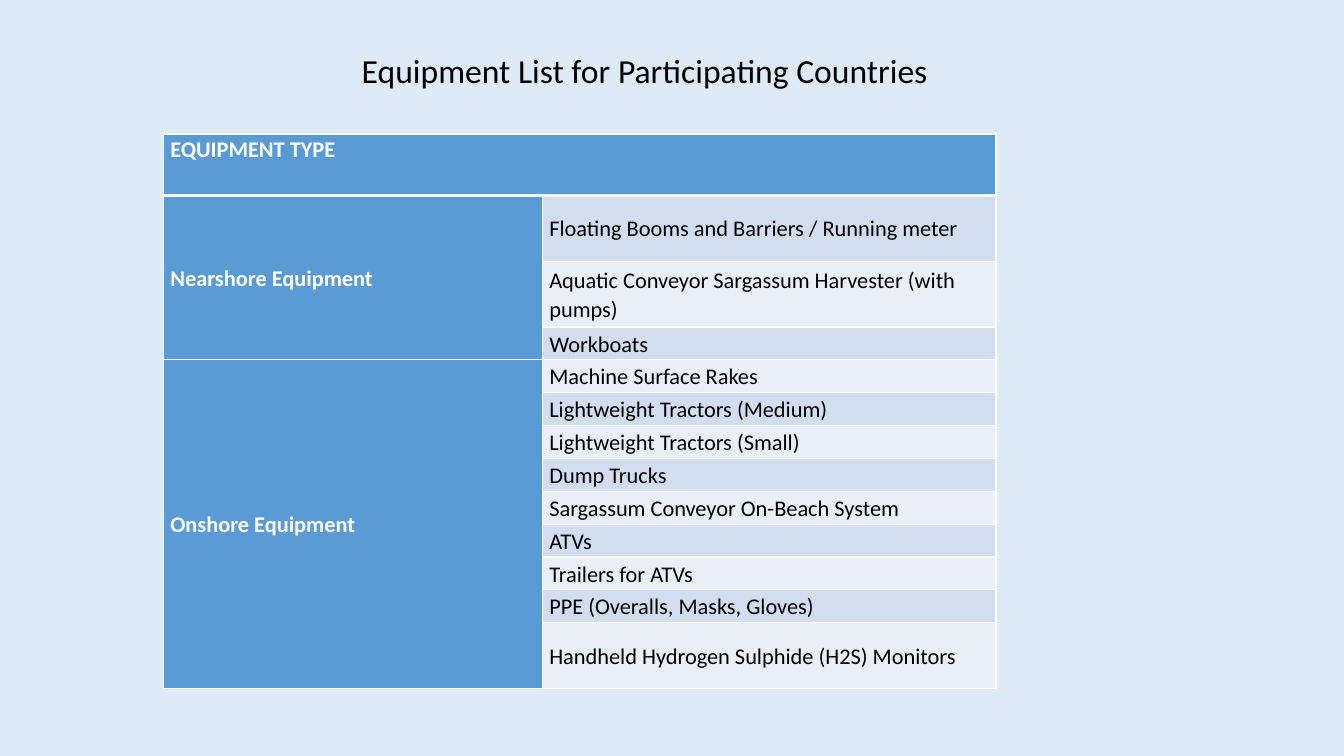
"""Build the equipment list slide."""
import pptx
import pptx.dml.color
import pptx.enum.text
import pptx.oxml
import pptx.oxml.ns
import pptx.util

RGBColor = pptx.dml.color.RGBColor
BACKGROUND = RGBColor(0xDE, 0xEB, 0xF7)
BLUE = RGBColor(0x5B, 0x9B, 0xD5)
DARK_BAND = RGBColor(0xD2, 0xDE, 0xEF)
LIGHT_BAND = RGBColor(0xEA, 0xEF, 0xF7)
WHITE = RGBColor(0xFF, 0xFF, 0xFF)
BLACK = RGBColor(0x00, 0x00, 0x00)

HEADING = "EQUIPMENT TYPE"
EQUIPMENT = {
    "Nearshore Equipment": [
        ("Floating Booms and Barriers / Running meter", 2),
        ("Aquatic Conveyor Sargassum Harvester (with pumps)", 2),
        ("Workboats", 1),
    ],
    "Onshore Equipment": [
        ("Machine Surface Rakes", 1),
        ("Lightweight Tractors (Medium)", 1),
        ("Lightweight Tractors (Small)", 1),
        ("Dump Trucks", 1),
        ("Sargassum Conveyor On-Beach System", 1),
        ("ATVs", 1),
        ("Trailers for ATVs", 1),
        ("PPE (Overalls, Masks, Gloves)", 1),
        ("Handheld Hydrogen Sulphide (H2S) Monitors", 2),
    ],
}
COLUMN_WIDTHS = (28.2, 33.75)
HEADER_HEIGHT = 8.13
LINE_HEIGHT = 4.35


class EquipmentPage:
    """Draw on one page, with lengths in percent of the slide's size."""

    font_name = "Calibri"
    title_size = 24
    cell_size = 16

    def __init__(self, deck):
        self.deck = deck
        self.page = deck.slides.add_slide(deck.slide_layouts[6])
        fill = self.page.background.fill
        fill.solid()
        fill.fore_color.rgb = BACKGROUND

    def across(self, share):
        return round(self.deck.slide_width * share / 100)

    def down(self, share):
        return round(self.deck.slide_height * share / 100)

    def add_text(self, para, text, size, color, bold=False):
        span = para.add_run()
        span.text = text
        span.font.name = self.font_name
        span.font.size = pptx.util.Pt(size)
        span.font.bold = bold
        span.font.color.rgb = color

    def title(self, text, left, top, width, height):
        box = self.page.shapes.add_textbox(
            self.across(left), self.down(top), self.across(width), self.down(height))
        frame = box.text_frame
        frame.word_wrap = False
        frame.auto_size = pptx.enum.text.MSO_AUTO_SIZE.SHAPE_TO_FIT_TEXT
        self.add_text(frame.paragraphs[0], text, self.title_size, BLACK)

    def table(self, left, top, widths, heights):
        frame = self.page.shapes.add_table(
            len(heights), len(widths), self.across(left), self.down(top),
            self.across(sum(widths)), self.down(sum(heights)))
        table = frame.table
        for column, width in zip(table.columns, widths):
            column.width = self.across(width)
        for row, height in zip(table.rows, heights):
            row.height = self.down(height)
        for index, row in enumerate(table.rows):
            for cell in row.cells:
                self.style_cell(cell, index)
        return table

    def style_cell(self, cell, row_index):
        cell.margin_left = cell.margin_right = pptx.util.Inches(0.07)
        cell.margin_top = cell.margin_bottom = 0
        widths = {"L": 1, "R": 1, "T": 3 if row_index == 1 else 1,
                  "B": 3 if row_index == 0 else 1}
        properties = cell._tc.get_or_add_tcPr()
        for position, (side, width) in enumerate(widths.items()):
            properties.insert(position, pptx.oxml.parse_xml(
                f'<a:ln{side} {pptx.oxml.ns.nsdecls("a")} w="{pptx.util.Pt(width)}">'
                f'<a:solidFill><a:srgbClr val="{WHITE}"/></a:solidFill></a:ln{side}>'))
        cell.fill.solid()
        cell.fill.fore_color.rgb = BLUE

    def cell(self, cell, text, color, fill, bold, anchor="MIDDLE"):
        cell.fill.fore_color.rgb = fill
        cell.vertical_anchor = pptx.enum.text.MSO_ANCHOR[anchor]
        para = cell.text_frame.paragraphs[0]
        para.line_spacing = 1.07
        self.add_text(para, text, self.cell_size, color, bold)


def main():
    deck = pptx.Presentation()
    deck.slide_width = pptx.util.Inches(13.33)
    deck.slide_height = pptx.util.Inches(7.5)
    page = EquipmentPage(deck)

    heights = [HEADER_HEIGHT] + [
        lines * LINE_HEIGHT for items in EQUIPMENT.values() for _, lines in items]
    table = page.table(12.15, 17.73, COLUMN_WIDTHS, heights)
    table.cell(0, 0).merge(table.cell(0, 1))
    page.cell(table.cell(0, 0), HEADING, WHITE, BLUE, True, "TOP")

    first = 1
    for group, items in EQUIPMENT.items():
        group_cell = table.cell(first, 0)
        group_cell.merge(table.cell(first + len(items) - 1, 0))
        page.cell(group_cell, group, WHITE, BLUE, True)
        for row, (item, _) in enumerate(items, first):
            band = DARK_BAND if row % 2 else LIGHT_BAND
            page.cell(table.cell(row, 1), item, BLACK, band, False)
        first += len(items)

    page.title("Equipment List for Participating Countries", 26.18, 6, 44.64, 6.67)
    deck.save("out.pptx")


if __name__ == "__main__":
    main()
